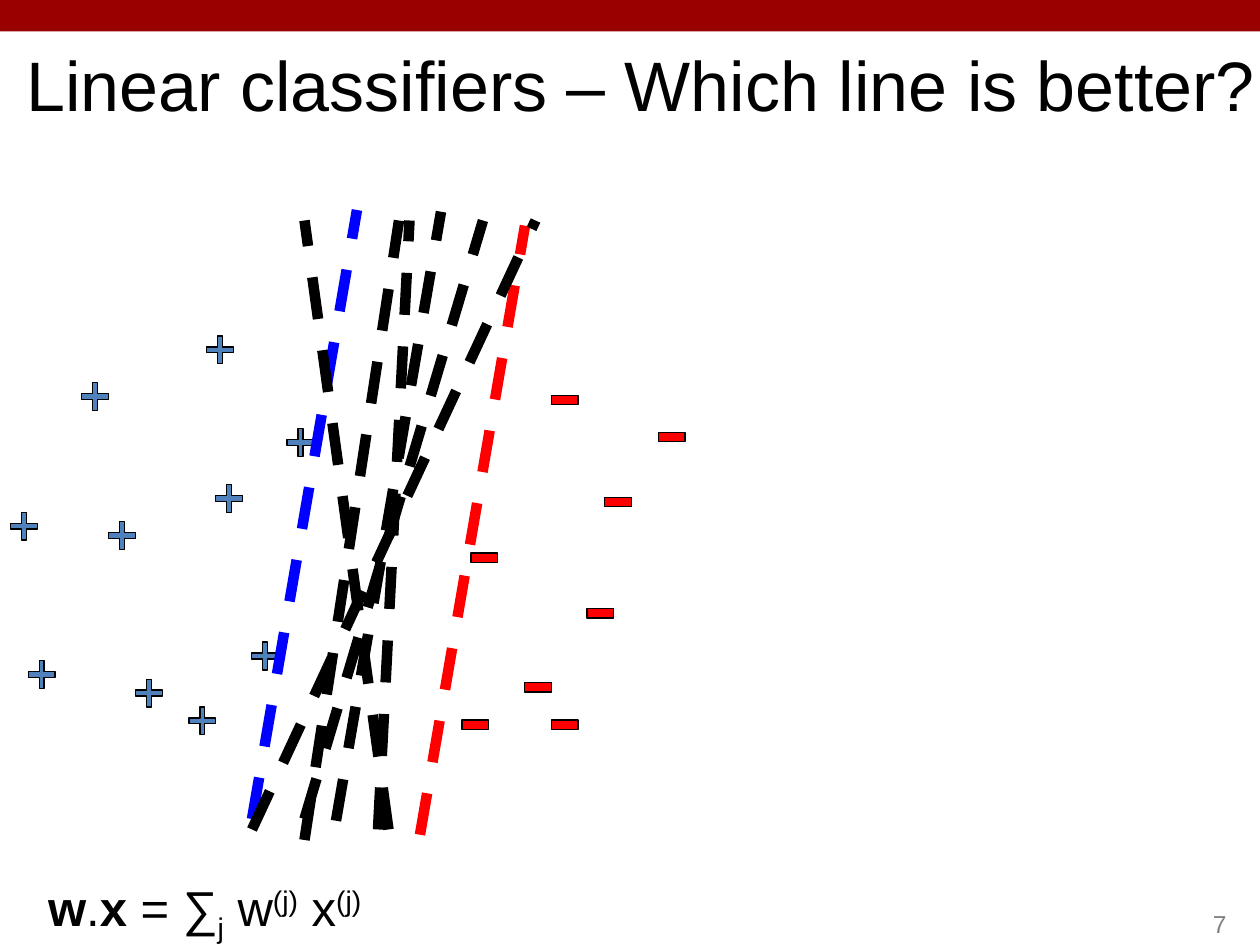
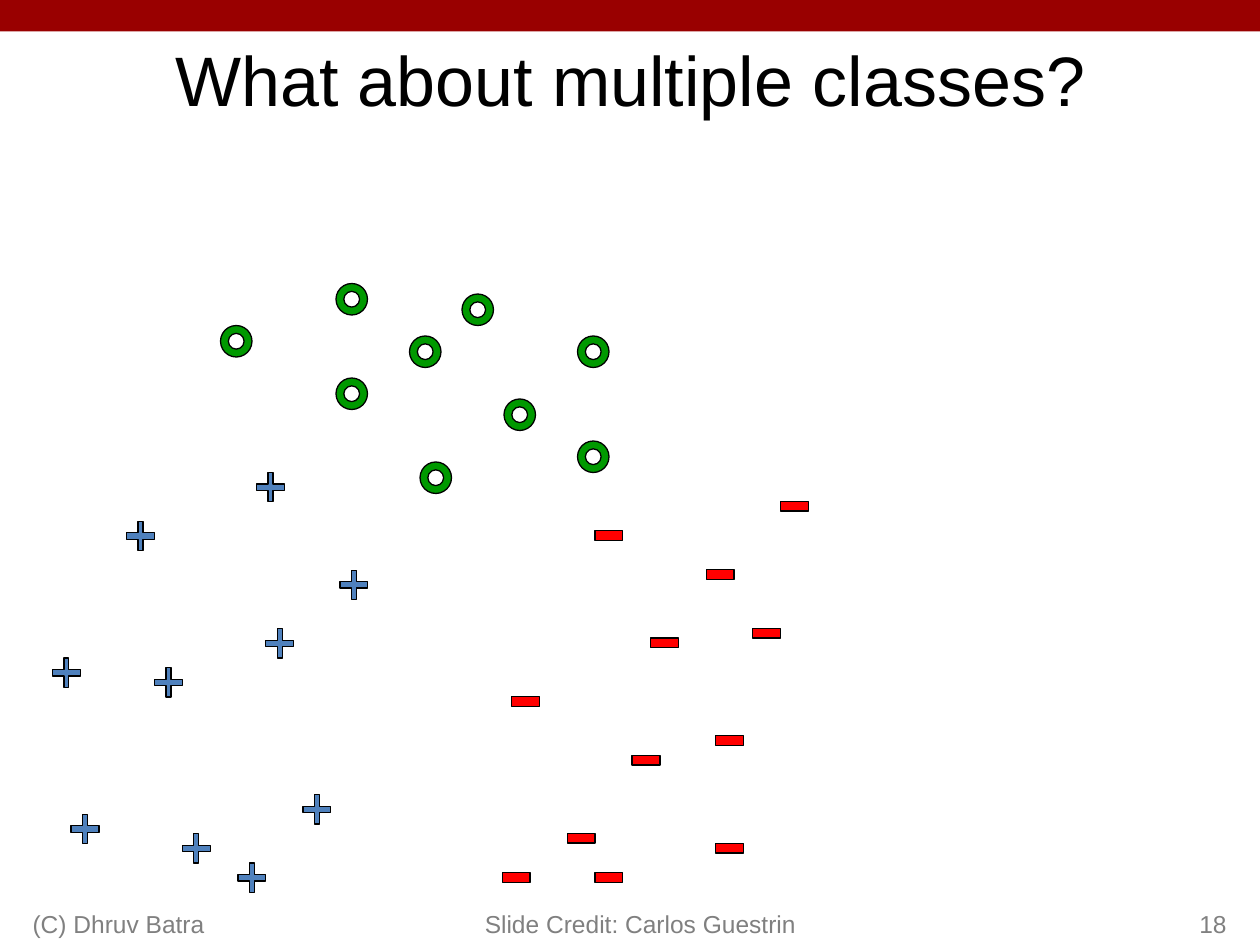
import pptx
import pptx.util
import pptx.dml.color
import pptx.enum.dml
import pptx.enum.shapes
import pptx.enum.text
import lxml.etree

Pt = pptx.util.Pt
RGB = pptx.dml.color.RGBColor.from_string
SHAPE = pptx.enum.shapes.MSO_SHAPE
ALIGN = pptx.enum.text.PP_ALIGN
ANCHOR = pptx.enum.text.MSO_ANCHOR

HUE = {"band": "990000", "ink": "000000", "gray": "808080", "plus": "4F81BD",
       "minus": "FF0000", "ring": "009900", "blue": "0000FF", "red": "FF0000"}
FONT = "Arial"


def say(slide, text, box, size=40, color="ink", align=ALIGN.CENTER, anchor=ANCHOR.MIDDLE):
    """Add a text box; text is a string or a list of (string, bold, baseline)."""
    frame = slide.shapes.add_textbox(*map(Pt, box)).text_frame
    frame.word_wrap = True
    frame.vertical_anchor = anchor
    para = frame.paragraphs[0]
    para.alignment = align
    for part, bold, base in [(text, False, 0)] if isinstance(text, str) else text:
        run = para.add_run()
        run.text = part
        run.font.name = FONT
        run.font.size = Pt(size)
        run.font.bold = bold
        run.font.color.rgb = RGB(HUE[color])
        if base:
            run._r.get_or_add_rPr().set("baseline", str(base * 1000))


def plot(slide, kind, spots, origin, step, rows=3, color="plus", adjust=None):
    """Group the marks of one class, each 3 grid cells wide and `rows` high."""
    group = slide.shapes.add_group_shape()
    for col, row in spots:
        mark = group.shapes.add_shape(
            kind, Pt(origin[0] + col * step[0]), Pt(origin[1] + row * step[1]),
            Pt(3 * step[0]), Pt(rows * step[1]))
        mark.shadow.inherit = False
        mark.fill.solid()
        mark.fill.fore_color.rgb = RGB(HUE[color])
        mark.line.color.rgb = RGB(HUE["ink"])
        mark.line.width = Pt(0.75)
        if adjust:
            mark.adjustments[0] = adjust


# Class members as (column, row) on a grid
PLUS = [(22, 0), (23, 16), (11, 20), (14, 37), (2, 35),
        (31, 10), (20, 40), (27, 33), (8, 5), (0, 19)]
MINUS = [(10, 3), (1, 20), (16, 14), (14, 26), (7, 34), (10, 38), (0, 38), (22, 7)]
MORE = [(30, 0), (23, 24), (23, 35), (27, 13)]
RING = [(11, 9), (23, 1), (27, 11), (18, 5), (19, 17), (0, 4), (34, 15), (34, 5), (11, 0)]

# Candidate lines: color, bottom point, top point
LINES = [("blue", (144, 468), (204, 120)), ("red", (240, 477), (300, 129)),
         ("ink", (192, 469), (252, 121)), ("ink", (216, 474), (234, 126)),
         ("ink", (174, 468), (276, 126)), ("ink", (222, 474), (174, 126)),
         ("ink", (144, 474), (306, 126)), ("ink", (174, 480), (228, 126))]

FORMULA = [("w", True, 0), (".", False, 0), ("x", True, 0), (" = ∑", False, 0),
           ("j", False, -25), (" w", False, 0), ("(j)", False, 30),
           (" x", False, 0), ("(j)", False, 30)]

deck = pptx.Presentation()
deck.slide_width, deck.slide_height = Pt(720), Pt(540)

# Parts on both slides: band, title, page number, plus and minus classes
pages = [
    ("Linear classifiers – Which line is better?", (0, -6, 732, 108), "7",
     (5.1, 5.3), (6, 192), (264, 210), MINUS),
    ("What about multiple classes?", (54, 18, 612, 54), "18",
     (5.3, 5.58), (30, 270), (287, 286.5), MINUS + MORE),
]
foot = dict(size=14, color="gray", anchor=ANCHOR.BOTTOM)
for title, box, page, step, left, right, minus in pages:
    slide = deck.slides.add_slide(deck.slide_layouts[6])
    band = slide.shapes.add_shape(SHAPE.RECTANGLE, 0, 0, Pt(720), Pt(18))
    band.shadow.inherit = False
    band.fill.solid()
    band.fill.fore_color.rgb = RGB(HUE["band"])
    band.line.fill.background()
    say(slide, title, box)
    plot(slide, SHAPE.CROSS, PLUS, left, step, adjust=0.41)
    plot(slide, SHAPE.RECTANGLE, minus, right, step, rows=1, color="minus")
    say(slide, page, (558, 504, 150, 36), align=ALIGN.RIGHT, **foot)

first, second = deck.slides

# Slide 1: dashed lines and formula
for color, low, high in LINES:
    line = first.shapes.add_connector(
        pptx.enum.shapes.MSO_CONNECTOR.STRAIGHT, *map(Pt, low + high))
    line.line.color.rgb = RGB(HUE[color])
    line.line.width = Pt(6)
    line.line.dash_style = pptx.enum.dml.MSO_LINE.DASH
    lxml.etree.SubElement(line._element.spPr, pptx.oxml.ns.qn("a:effectLst"))
say(first, FORMULA, (6, 498, 222, 41), size=28, anchor=ANCHOR.TOP)

# Slide 2: third class and credits
plot(second, SHAPE.DONUT, RING, (126, 162), (6, 6), color="ring", adjust=0.25)
say(second, "Slide Credit: Carlos Guestrin", (252, 504, 210, 36), align=ALIGN.RIGHT, **foot)
say(second, "(C) Dhruv Batra", (11.5, 504, 228, 36), align=ALIGN.LEFT, **foot)

deck.save("out.pptx")
